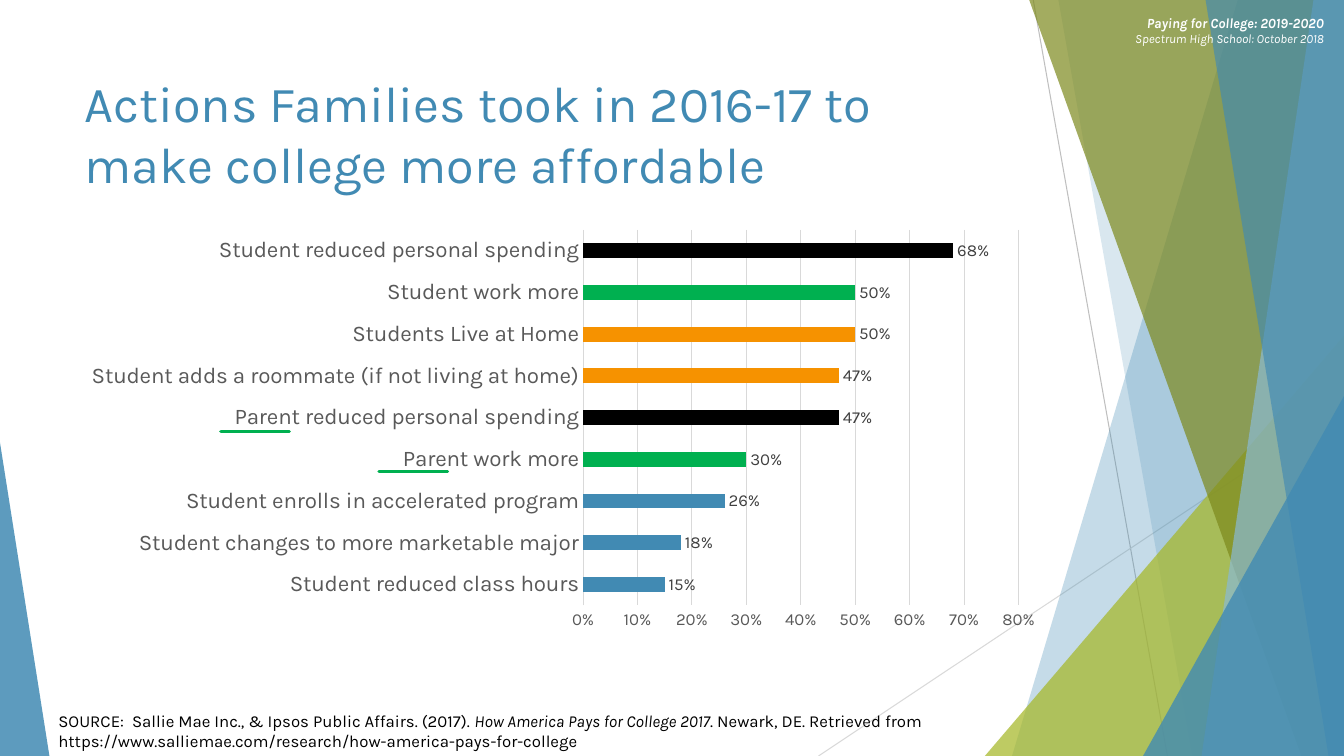
"""Build the slide on actions families took to make college more affordable."""
from itertools import cycle

from lxml.etree import SubElement
from pptx import Presentation
from pptx.chart.data import CategoryChartData
from pptx.dml.color import RGBColor
from pptx.enum.chart import XL_CHART_TYPE, XL_LABEL_POSITION, XL_TICK_MARK
from pptx.enum.shapes import MSO_CONNECTOR, MSO_SHAPE
from pptx.enum.text import MSO_ANCHOR, PP_ALIGN
from pptx.oxml import parse_xml
from pptx.oxml.ns import nsdecls, qn
from pptx.util import Inches, Pt

BARS = XL_CHART_TYPE.BAR_CLUSTERED
OUTSIDE_END = XL_LABEL_POSITION.OUTSIDE_END
NO_TICK = XL_TICK_MARK.NONE
STRAIGHT = MSO_CONNECTOR.STRAIGHT
TRIANGLE = MSO_SHAPE.ISOSCELES_TRIANGLE
TOP = MSO_ANCHOR.TOP
LEFT, RIGHT = PP_ALIGN.LEFT, PP_ALIGN.RIGHT

BLUE = RGBColor(0x41, 0x8A, 0xB3)
PALE_BLUE = RGBColor(0x8A, 0xBA, 0xD4)
LIME = RGBColor(0xA6, 0xB7, 0x27)
OLIVE = RGBColor(0x7D, 0x89, 0x1D)
GREEN = RGBColor(0x00, 0xB0, 0x50)
ORANGE = RGBColor(0xF6, 0x92, 0x00)
BLACK = RGBColor(0x00, 0x00, 0x00)
WHITE = RGBColor(0xFF, 0xFF, 0xFF)
LABEL_GRAY = RGBColor(0x40, 0x40, 0x40)
AXIS_GRAY = RGBColor(0x59, 0x59, 0x59)
LINE_GRAY = RGBColor(0xBF, 0xBF, 0xBF)
GRID_GRAY = RGBColor(0xD9, 0xD9, 0xD9)

FONT = "Karla"
WIDTH, HEIGHT = Inches(13.33), Inches(7.5)
COLUMN, ROW = WIDTH / 100, HEIGHT / 100

deck = Presentation()
deck.slide_width, deck.slide_height = WIDTH, HEIGHT
page = deck.slides.add_slide(deck.slide_layouts[6])


def grid(*lengths):
    """Turn alternating columns and rows into slide units."""
    return [round(length * unit) for length, unit in zip(lengths, cycle((COLUMN, ROW)))]


def draw_line(ends, color, weight, cap):
    """Draw a straight line without shadow."""
    line = page.shapes.add_connector(STRAIGHT, *grid(*ends))
    line.line.color.rgb = color
    line.line.width = Pt(weight)
    line.line._ln.set("cap", cap)
    SubElement(line._element.spPr, qn("a:effectLst"))


draw_line((76.88, 0, 86.86, 100), LINE_GRAY, 0.75, "flat")
draw_line((100, 53.73, 60.9, 100), GRID_GRAY, 0.75, "flat")

# Bands give their upper and lower left corner; triangles left, top, width, apex.
FACETS = (
    ((92.1, 75.3), BLUE, 30),
    ((78.75, 88.73), BLUE, 20),
    ((73.28, 44.4, 26.72, 1), LIME, 72),
    ((76.58, 96.83), OLIVE, 70),
    ((97.73, 89.4), PALE_BLUE, 70),
    ((89.7, 98.85), BLUE, 65),
    ((85.05, 52.4, 14.95, 1), BLUE, 80),
    ((0, 58.53, 3.68, 0), BLUE, 85),
)
for outline, color, opacity in FACETS:
    if len(outline) == 2:
        upper, lower = outline
        builder = page.shapes.build_freeform(*grid(upper, 0))
        corners = ((100, 0), (100, 100), (lower, 100))
        builder.add_line_segments([grid(*corner) for corner in corners], close=True)
        facet = builder.convert_to_shape()
    else:
        left, top, width, apex = outline
        facet = page.shapes.add_shape(TRIANGLE, *grid(left, top, width, 100 - top))
        facet.adjustments[0] = apex
    facet.shadow.inherit = False
    facet.line.fill.background()
    facet.fill.solid()
    facet.fill.fore_color.rgb = color
    tint = facet._element.spPr.find(qn("a:solidFill"))[0]
    SubElement(tint, qn("a:alpha")).set("val", str(opacity * 1000))

TEXTS = (
    ((77.93, 1.2, 21.3, 5.6), RIGHT, WHITE, (
        (("Paying for College: 2019-2020", {"size": Pt(10), "bold": True, "italic": True}),),
        (("Spectrum High School: October 2018", {"size": Pt(9), "italic": True}),),
    )),
    ((5.55, 8.93, 70.5, 19.2), LEFT, BLUE, (
        (("Actions Families took in 2016-17 to make college more affordable",
          {"size": Pt(36)}),),
    )),
    ((3.6, 93.33, 67.65, 6.67), LEFT, BLACK, (
        (("SOURCE:  Sallie Mae Inc., & Ipsos Public Affairs. (2017). ", {"size": Pt(12)}),
         ("How America Pays for College 2017", {"size": Pt(12), "italic": True}),
         (". Newark, DE. Retrieved from "
          "https://www.salliemae.com/research/how-america-pays-for-college", {"size": Pt(12)})),
    )),
)
fonts = []
for place, alignment, color, paragraphs in TEXTS:
    frame = page.shapes.add_textbox(*grid(*place)).text_frame
    frame.word_wrap = True
    frame.vertical_anchor = TOP
    for index, spans in enumerate(paragraphs):
        para = frame.add_paragraph() if index else frame.paragraphs[0]
        para.alignment = alignment
        for words, formats in spans:
            span = para.add_run()
            span.text = words
            fonts.append((span.font, color, formats))

ACTIONS = (
    ("Student reduced class hours", 0.15, BLUE),
    ("Student changes to more marketable major", 0.18, BLUE),
    ("Student enrolls in accelerated program", 0.26, BLUE),
    ("Parent work more", 0.3, GREEN),
    ("Parent reduced personal spending", 0.47, BLACK),
    ("Student adds a roommate (if not living at home)", 0.47, ORANGE),
    ("Students Live at Home", 0.5, ORANGE),
    ("Student work more", 0.5, GREEN),
    ("Student reduced personal spending", 0.68, BLACK),
)
names, shares, colors = zip(*ACTIONS)
data = CategoryChartData(number_format="0%")
data.categories = names
data.add_series("Series 1", shares)
chart = page.shapes.add_chart(BARS, *grid(-11.93, 28.13, 90.53, 63.07), data).chart
chart.has_title = chart.has_legend = False

plot = chart.plots[0]
plot.gap_width = 182
plot.vary_by_categories = False
plot.has_data_labels = True
labels = plot.data_labels
labels.show_value = True
labels.position = OUTSIDE_END
series = plot.series[0]
series.format.fill.solid()
series.format.fill.fore_color.rgb = BLUE
for index, color in enumerate(colors):
    if color != BLUE:
        fill = series.points[index].format.fill
        fill.solid()
        fill.fore_color.rgb = color

actions, scale = chart.category_axis, chart.value_axis
for axis in (actions, scale):
    axis.major_tick_mark = axis.minor_tick_mark = NO_TICK
scale.minimum_scale, scale.maximum_scale, scale.major_unit = 0, 0.8, 0.1
scale.has_major_gridlines = True
scale.format.line.fill.background()
for line in (actions.format.line, scale.major_gridlines.format.line):
    line.color.rgb = GRID_GRAY
    line.width = Pt(0.75)
for numbers in (labels, scale.tick_labels):
    numbers.number_format = "0%"
    numbers.number_format_is_linked = False

area = chart._chartSpace.chart.plotArea
for layout in area.findall(qn("c:layout")):
    area.remove(layout)
settings = {"layoutTarget": "inner", "xMode": "edge", "yMode": "edge",
            "x": 0.61, "y": 0.04, "w": 0.36, "h": 0.79}
settings.update(x=61.1 / 100, y=3.6 / 100, w=35.8 / 100, h=78.8 / 100)
layout = parse_xml(f"<c:layout {nsdecls('c')}><c:manualLayout/></c:layout>")
for name, value in settings.items():
    SubElement(layout[0], qn(f"c:{name}")).set("val", str(value))
area.insert(0, layout)

fonts += [
    (chart.font, BLACK, {"size": Pt(10)}),
    (actions.tick_labels.font, AXIS_GRAY, {"size": Pt(16)}),
    (scale.tick_labels.font, AXIS_GRAY, {"size": Pt(12)}),
    (labels.font, LABEL_GRAY, {"size": Pt(12)}),
]
for font, color, formats in fonts:
    font.color.rgb = color
    for name, value in {"name": FONT, **formats}.items():
        setattr(font, name, value)

for left, level in ((16.43, 57.07), (28.2, 62.4)):
    draw_line((left, level, left + 5.1, level), GREEN, 2.25, "rnd")

deck.save("out.pptx")
